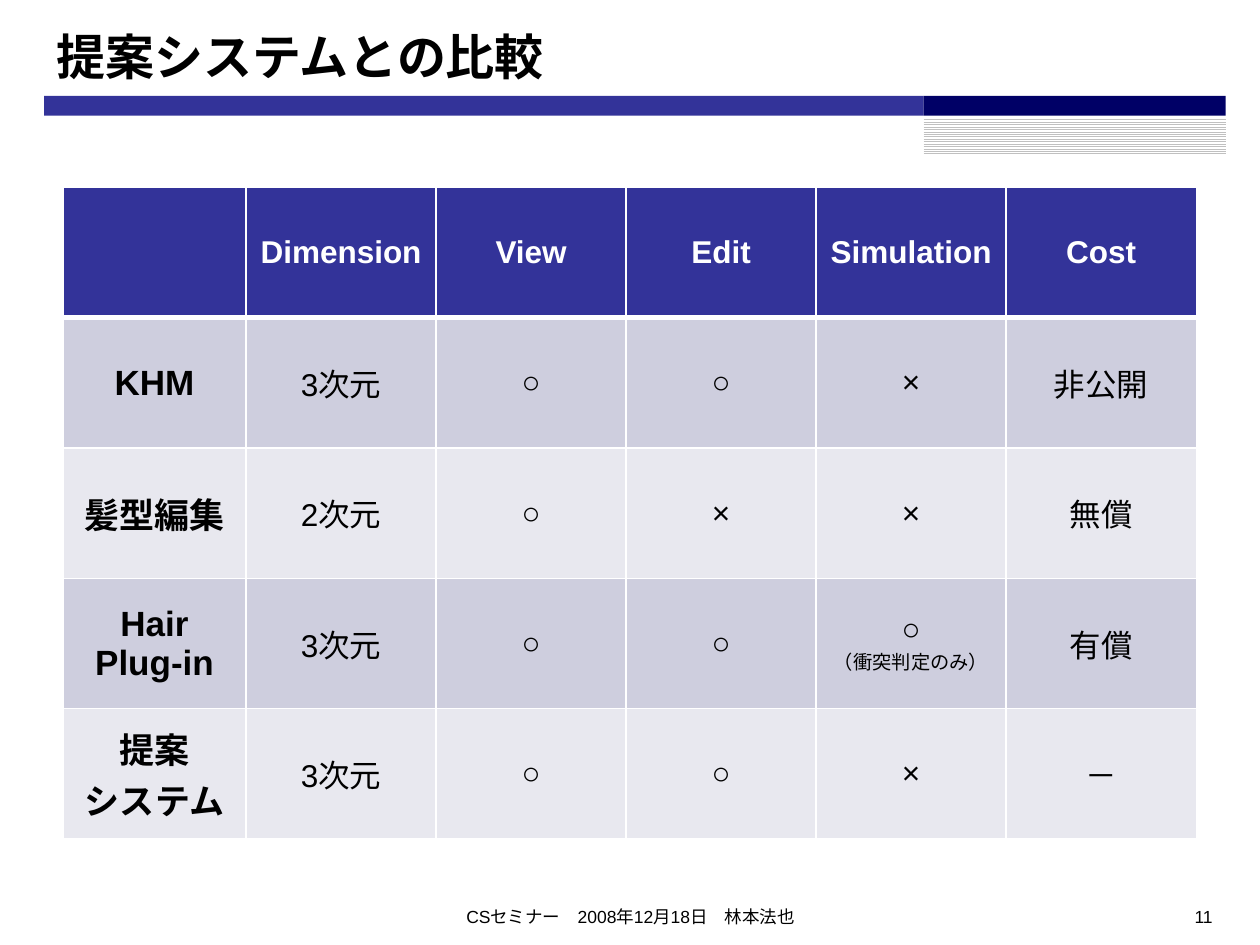
import pptx
import pptx.dml.color
import pptx.enum.dml
import pptx.enum.lang
import pptx.enum.shapes
import pptx.enum.text
import pptx.oxml.ns
import pptx.util
from lxml import etree

Pt = pptx.util.Pt
ALIGN = pptx.enum.text.PP_ALIGN
ANCHOR = pptx.enum.text.MSO_ANCHOR

BLACK, WHITE, BLUE, NAVY, GREY = "000000", "FFFFFF", "333399", "000066", "C0C0C0"
BANDS = ["CECEDE", "E8E8EF"]

HEADER = ["", "Dimension", "View", "Edit", "Simulation", "Cost"]
SYSTEMS = [
    ["KHM", "3次元", "○", "○", "×", "非公開"],
    ["髪型編集", "2次元", "○", "×", "×", "無償"],
    ["Hair Plug-in", "3次元", "○", "○", "○\n（衝突判定のみ）", "有償"],
    ["提案\nシステム", "3次元", "○", "○", "×", "－"],
]


def rgb(value):
    return pptx.dml.color.RGBColor.from_string(value)


def write(tf, text, size=18, color=BLACK, bold=False, align=ALIGN.CENTER,
          anchor=ANCHOR.TOP, font="Arial", note_size=None):
    """Write one paragraph per line; note_size applies to lines after the first."""
    tf.word_wrap = True
    tf.vertical_anchor = anchor
    for i, line in enumerate(text.split("\n")):
        p = tf.add_paragraph() if i else tf.paragraphs[0]
        p.alignment = align
        r = p.add_run()
        r.text = line
        r.font.name = font
        r.font.size = Pt(note_size if i and note_size else size)
        r.font.bold = bold
        r.font.color.rgb = rgb(color)
        r.font.language_id = pptx.enum.lang.MSO_LANGUAGE_ID.JAPANESE


def border(cell, side, width, color=WHITE):
    """Draw one cell edge; call it before the cell gets its fill."""
    qn = pptx.oxml.ns.qn
    ln = etree.SubElement(cell._tc.get_or_add_tcPr(), qn(f"a:ln{side}"), w=str(Pt(width)))
    fill = etree.SubElement(ln, qn("a:solidFill"))
    etree.SubElement(fill, qn("a:srgbClr"), val=color)


class Deck:
    def __init__(self, width, height):
        self.prs = pptx.Presentation()
        self.prs.slide_width, self.prs.slide_height = Pt(width), Pt(height)
        self.s = self.prs.slides.add_slide(self.prs.slide_layouts[6])

    def bar(self, x, y, w, h, color, hatched=False):
        sp = self.s.shapes.add_shape(pptx.enum.shapes.MSO_SHAPE.RECTANGLE,
                                     Pt(x), Pt(y), Pt(w), Pt(h))
        sp.shadow.inherit = False
        sp.line.fill.background()
        if hatched:
            sp.fill.patterned()
            sp.fill.pattern = pptx.enum.dml.MSO_PATTERN.LIGHT_HORIZONTAL
            sp.fill.fore_color.rgb = rgb(color)
            sp.fill.back_color.rgb = rgb(WHITE)
        else:
            sp.fill.solid()
            sp.fill.fore_color.rgb = rgb(color)

    def text(self, x, y, w, h, text, **fmt):
        sp = self.s.shapes.add_textbox(Pt(x), Pt(y), Pt(w), Pt(h))
        write(sp.text_frame, text, **fmt)

    def table(self, x, y, widths, row_height, rows):
        """Build a banded table with a header row and bold first column."""
        table = self.s.shapes.add_table(len(rows), len(widths), Pt(x), Pt(y),
                                        Pt(sum(widths)), Pt(row_height * len(rows))).table
        for column, width in zip(table.columns, widths):
            column.width = Pt(width)
        for i, row in enumerate(rows):
            table.rows[i].height = Pt(row_height)
            for j, text in enumerate(row):
                cell = table.cell(i, j)
                edges = {"L": 1, "R": 1, "T": 3 if i == 1 else 1, "B": 1 if i else 3}
                for side, width in edges.items():
                    border(cell, side, width)
                cell.fill.solid()
                cell.fill.fore_color.rgb = rgb(BANDS[(i - 1) % 2] if i else BLUE)
                cell.vertical_anchor = ANCHOR.MIDDLE
                if text:
                    write(cell.text_frame, text, size=20 if i and not j else 18,
                          color=BLACK if i else WHITE, bold=not i or not j,
                          anchor=None, note_size=11 if j else None)


def main():
    deck = Deck(720, 540)
    deck.bar(25.2, 54.8, 502.6, 11.3, BLUE)
    deck.bar(527.8, 67, 172.6, 21.6, GREY, hatched=True)
    deck.bar(527.8, 54.8, 172.6, 11.3, NAVY)
    deck.text(25.2, 9.4, 675.2, 45.4, "提案システムとの比較", size=28, bold=True,
              align=ALIGN.LEFT, anchor=ANCHOR.MIDDLE)
    deck.table(36, 107, [104.6] + [108.6] * 5, 74.5, [HEADER] + SYSTEMS)
    deck.text(246.2, 514, 228.2, 21, "CSセミナー　2008年12月18日　林本法也", size=10)
    deck.text(532, 514, 168, 21, "11", size=10, align=ALIGN.RIGHT)
    deck.prs.save("out.pptx")


if __name__ == "__main__":
    main()
